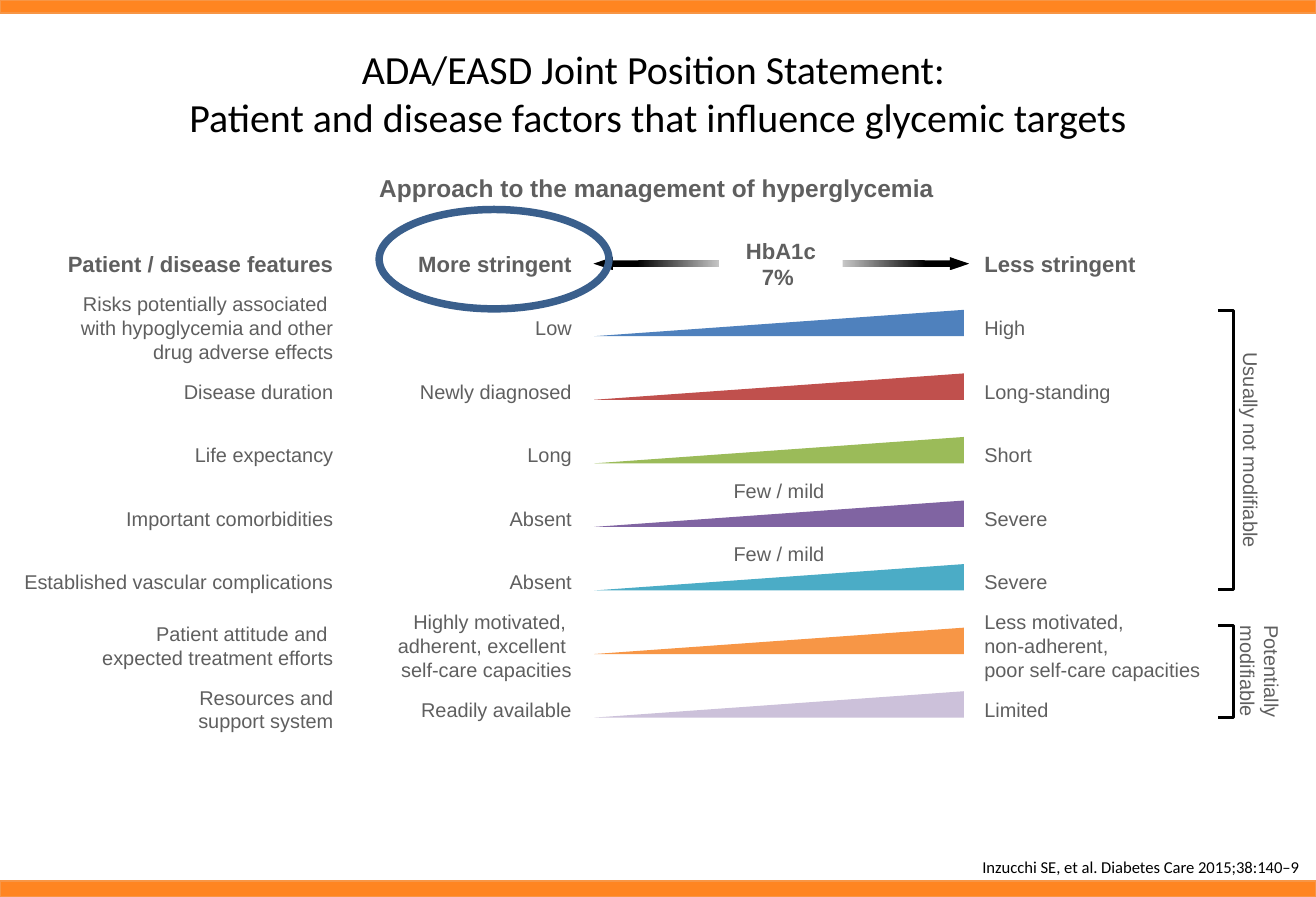
from pptx import Presentation
from pptx.dml.color import RGBColor
from pptx.enum.shapes import MSO_SHAPE
from pptx.enum.text import MSO_ANCHOR, PP_ALIGN
from pptx.util import Cm, Pt

RECT, OVAL = MSO_SHAPE.RECTANGLE, MSO_SHAPE.OVAL
WEDGE, ARROW, BRACKET = MSO_SHAPE.RIGHT_TRIANGLE, MSO_SHAPE.LEFT_ARROW, MSO_SHAPE.RIGHT_BRACKET
LEFT, CENTER, RIGHT = PP_ALIGN.LEFT, PP_ALIGN.CENTER, PP_ALIGN.RIGHT
MIDDLE, BOTTOM = MSO_ANCHOR.MIDDLE, MSO_ANCHOR.BOTTOM

COLORS = {
    "bar": "FF8521", "bar_line": "F79646", "text": "5F5F5F", "black": "000000",
    "white": "FFFFFF", "ring": "3A5F8C", "blue": "4F81BD", "red": "C0504D",
    "green": "9BBB59", "purple": "8064A2", "aqua": "4BACC6", "orange": "F79646",
    "lilac": "CCC1DA",
}

# Lengths in cm
SLIDE_W, SLIDE_H = 27.94, 19.05
FEATURE_RIGHT, MORE_RIGHT, LESS_LEFT = 7.33, 12.39, 20.65
NARROW, WIDE, FULL = 3.84, 6.68, 7.33
HEADER_Y, FIRST_ROW_Y, ROW_STEP = 5.6, 6.96, 1.35
WEDGE_X, WEDGE_W, WEDGE_H = 16.54, 7.85, 0.56
LINE_H, PADDING = 0.52, 0.25

# Feature, its width, more stringent, less stringent, their width, colour, note
ROWS = [
    ("Risks potentially associated \nwith hypoglycemia and other\ndrug adverse effects",
     FULL, "Low", "High", NARROW, "blue", None),
    ("Disease duration", NARROW, "Newly diagnosed", "Long-standing", NARROW, "red", None),
    ("Life expectancy", FULL, "Long", "Short", NARROW, "green", None),
    ("Important comorbidities", FULL, "Absent", "Severe", NARROW, "purple", "Few / mild"),
    ("Established vascular complications", FULL, "Absent", "Severe", NARROW, "aqua", "Few / mild"),
    ("Patient attitude and \nexpected treatment efforts", WIDE,
     "Highly motivated, \nadherent, excellent \nself-care capacities",
     "Less motivated, \nnon-adherent, \npoor self-care capacities", WIDE, "orange", None),
    ("Resources and\nsupport system", NARROW, "Readily available", "Limited", NARROW, "lilac", None),
]


def rgb(name):
    return RGBColor.from_string(COLORS[name])


def write(sp, text, size=12, align=LEFT, bold=False, color="text", font="Arial", anchor=MIDDLE):
    tf = sp.text_frame
    tf.word_wrap = True
    tf.vertical_anchor = anchor
    p = tf.paragraphs[0]
    p.alignment = align
    for i, line in enumerate(text.split("\n")):
        if i:
            p.add_line_break()
        r = p.add_run()
        r.text = line
        r.font.size, r.font.bold, r.font.name = Pt(size), bold, font
        r.font.color.rgb = rgb(color)


def add_label(slide, text, x, mid_y, w, h=None, align=LEFT, **style):
    """Text box whose left, centre or right edge (by alignment) is at x."""
    h = h or LINE_H * len(text.split("\n")) + PADDING
    left = x - {LEFT: 0, CENTER: w / 2, RIGHT: w}[align]
    sp = slide.shapes.add_textbox(Cm(left), Cm(mid_y - h / 2), Cm(w), Cm(h))
    write(sp, text, align=align, **style)
    return sp


def add_shape(slide, kind, x, y, w, h, fill=None, line=None, weight=0.75):
    sp = slide.shapes.add_shape(kind, Cm(x), Cm(y), Cm(w), Cm(h))
    sp.shadow.inherit = False
    if fill:
        sp.fill.solid()
        sp.fill.fore_color.rgb = rgb(fill)
    else:
        sp.fill.background()
    if line:
        sp.line.color.rgb = rgb(line)
        sp.line.width = Pt(weight)
    else:
        sp.line.fill.background()
    return sp


def add_arrow(slide, x, rotation):
    sp = add_shape(slide, ARROW, x, HEADER_Y - 0.14, 3.18, 0.28)
    sp.adjustments[0], sp.adjustments[1] = 0.5, 1.48
    sp.rotation = rotation
    sp.fill.gradient()
    sp.fill.gradient_angle = 0
    for stop, position, color in zip(sp.fill.gradient_stops, (0.29, 1), ("black", "white")):
        stop.position = position
        stop.color.rgb = rgb(color)


def add_group(slide, text, y, h, text_x, text_h):
    """Bracket beside a group of rows, with its turned caption."""
    add_shape(slide, BRACKET, 25.86, y, 0.33, h, line="black", weight=1.5).adjustments[0] = 0
    w = max(h, 2.84)
    add_label(slide, text, text_x, y + h / 2, w, text_h, align=CENTER).rotation = 90


def add_row(slide, y, feature, feature_w, more, less, side_w, color, note):
    add_label(slide, feature, FEATURE_RIGHT, y, feature_w, align=RIGHT)
    add_label(slide, more, MORE_RIGHT, y, side_w, align=RIGHT)
    add_label(slide, less, LESS_LEFT, y, side_w)
    # The triangle is drawn upright, then turned about its centre
    sp = add_shape(slide, WEDGE, WEDGE_X - WEDGE_H / 2, y - 0.1 - WEDGE_W / 2,
                   WEDGE_H, WEDGE_W, fill=color)
    sp.rotation = 270
    if note:
        add_label(slide, note, WEDGE_X, y - 0.6, 2.87, align=CENTER)


def main():
    prs = Presentation()
    prs.slide_width, prs.slide_height = Cm(SLIDE_W), Cm(SLIDE_H)
    slide = prs.slides.add_slide(prs.slide_layouts[6])

    # Edge bars
    for y, h in ((0, 0.28), (18.71, 0.34)):
        add_shape(slide, RECT, 0, y, SLIDE_W, h, fill="bar", line="bar_line")

    # Title, subtitle and citation
    add_label(slide, "ADA/EASD Joint Position Statement: \n"
              "Patient and disease factors that influence glycemic targets",
              13.97, 1.97, 25.15, 2.41, align=CENTER, size=24, color="black", font="Calibri")
    add_label(slide, "Approach to the management of hyperglycemia", 13.94, 3.98, 22.07, 0.89,
              align=CENTER, size=14.7, bold=True)
    sp = add_label(slide, "Inzucchi SE, et al. Diabetes Care 2015;38:140–9", 27.58, 17.88, 13.1,
                   1.47, align=RIGHT, size=10, color="black", font="Calibri", anchor=BOTTOM)
    tf = sp.text_frame
    tf.margin_top = tf.margin_right = tf.margin_bottom = 0

    # Header row
    header = {"size": 13.3, "bold": True}
    add_label(slide, "Patient / disease features", FEATURE_RIGHT, HEADER_Y, FULL, 0.84,
              align=RIGHT, **header)
    add_label(slide, "More stringent", MORE_RIGHT, HEADER_Y, NARROW, 0.84, align=RIGHT, **header)
    add_label(slide, "Less stringent", LESS_LEFT, HEADER_Y, NARROW, 0.84, **header)
    add_arrow(slide, 12.6, 0)
    add_arrow(slide, 17.4, 180)
    sp = add_shape(slide, RECT, 15.27, HEADER_Y - 0.7, 2.62, 1.4, fill="white")
    write(sp, "HbA1c 7% ", align=CENTER, **header)

    # Factor rows
    for i, row in enumerate(ROWS):
        add_row(slide, FIRST_ROW_Y + i * ROW_STEP, *row)

    # Row groups
    add_group(slide, "Usually not modifiable", 6.6, 5.92, 26.56, 0.76)
    add_group(slide, "Potentially modifiable", 13.28, 1.96, 26.75, 1.28)

    # Ring around the stringent end
    add_shape(slide, OVAL, 8.05, 4.45, 4.88, 2.11, line="ring", weight=4.5)

    prs.save("out.pptx")


if __name__ == "__main__":
    main()
